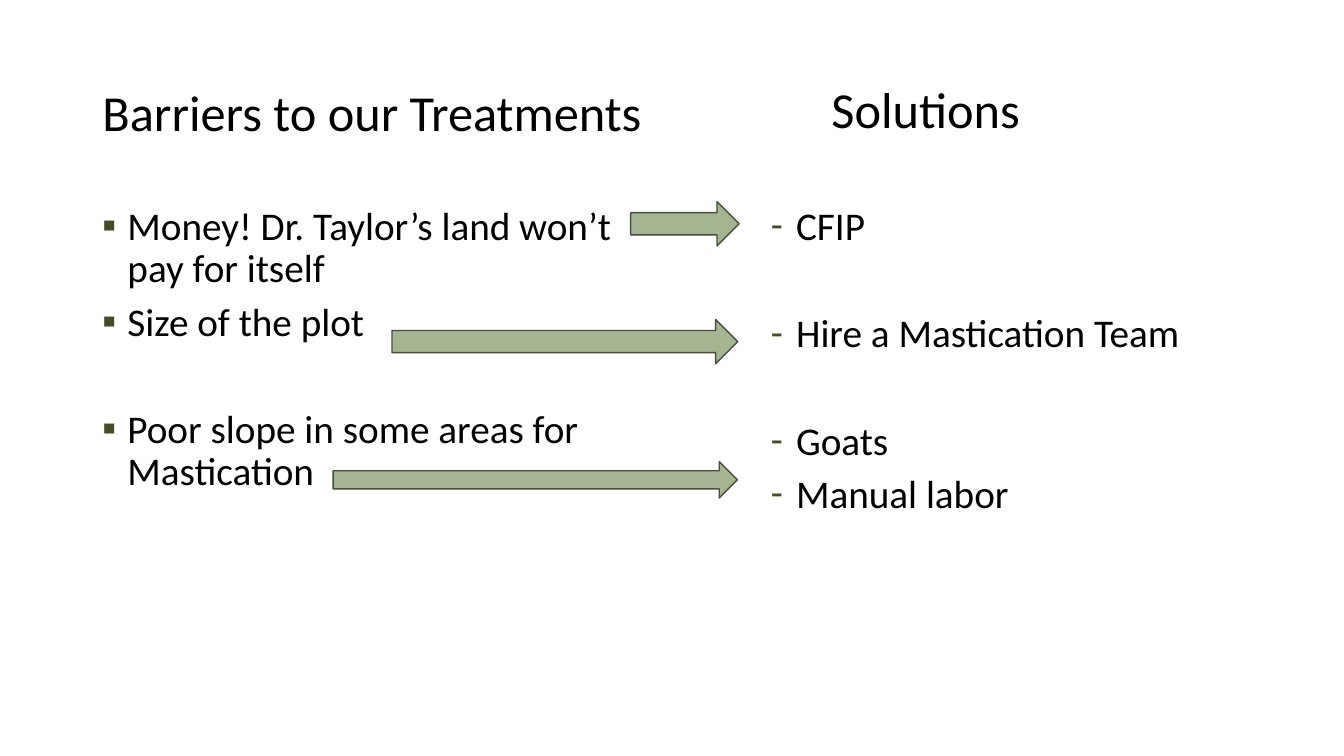
from dataclasses import dataclass

from lxml import etree
from pptx import Presentation
from pptx.dml.color import RGBColor
from pptx.enum.shapes import MSO_SHAPE
from pptx.enum.text import MSO_ANCHOR, MSO_AUTO_SIZE, PP_ALIGN
from pptx.oxml.ns import qn
from pptx.slide import Slide
from pptx.util import Pt

RIGHT_ARROW = MSO_SHAPE.RIGHT_ARROW
MIDDLE, TOP = MSO_ANCHOR.MIDDLE, MSO_ANCHOR.TOP
NO_AUTOFIT = MSO_AUTO_SIZE.NONE
LEFT = PP_ALIGN.LEFT

FONT = "Calibri"
BLACK, OLIVE, SAGE, OUTLINE = "000000", "444D26", "A5B592", "484F40"
HEADING_SIZE, BODY_SIZE = 36, 28
INDENT = 18
NEAR, FAR = 7.8, 46.4


@dataclass(frozen=True)
class Box:
    left: float
    top: float
    width: float
    height: float


@dataclass(frozen=True)
class Item:
    text: str
    before: float = 0


@dataclass(frozen=True)
class BulletList:
    box: Box
    mark: str
    items: tuple[Item, ...]


TITLE_BOX = Box(66, 28.8, 414, 104.4)
SOLUTIONS_BOX = Box(586.8, 52.5, 160.6, 51)
LISTS = (
    BulletList(Box(66, 144, 381.6, 324), "▪", (
        Item("Money! Dr. Taylor’s land won’t pay for itself"),
        Item("Size of the plot", NEAR),
        Item("Poor slope in some areas for Mastication", FAR),
    )),
    BulletList(Box(543.6, 144, 311.8, 324), "-", (
        Item("CFIP"),
        Item("Hire a Mastication Team", FAR),
        Item("Goats", FAR),
        Item("Manual labor", NEAR),
    )),
)
ARROWS = (
    Box(450.5, 144, 77.5, 31.7),
    Box(280, 228.2, 247, 31.7),
    Box(238, 329.8, 288.7, 25.9),
)


def rgb(value: str) -> RGBColor:
    return RGBColor.from_string(value)


def place(sp, box: Box) -> None:
    sp.left, sp.top = Pt(box.left), Pt(box.top)
    sp.width, sp.height = Pt(box.width), Pt(box.height)


def style(p, size: float) -> None:
    p.alignment = LEFT
    for r in p.runs:
        r.font.name = FONT
        r.font.size = Pt(size)
        r.font.color.rgb = rgb(BLACK)


def add_box(s: Slide, box: Box):
    sp = s.shapes.add_textbox(
        Pt(box.left), Pt(box.top), Pt(box.width), Pt(box.height))
    tf = sp.text_frame
    tf.word_wrap = True
    tf.auto_size = NO_AUTOFIT
    tf.vertical_anchor = TOP
    return tf


def add_bullet(p, mark: str) -> None:
    pPr = p._p.get_or_add_pPr()
    pPr.set("marL", str(Pt(INDENT)))
    pPr.set("indent", str(-Pt(INDENT)))
    color = etree.SubElement(pPr, qn("a:buClr"))
    etree.SubElement(color, qn("a:srgbClr"), val=OLIVE)
    etree.SubElement(pPr, qn("a:buFont"), typeface=FONT)
    etree.SubElement(pPr, qn("a:buChar"), char=mark)


def add_list(s: Slide, bullets: BulletList) -> None:
    tf = add_box(s, bullets.box)
    for i, item in enumerate(bullets.items):
        p = tf.add_paragraph() if i else tf.paragraphs[0]
        p.text = item.text
        add_bullet(p, bullets.mark)
        p.line_spacing = 0.9
        p.space_before = Pt(item.before)
        style(p, BODY_SIZE)


def add_arrow(s: Slide, box: Box) -> None:
    sp = s.shapes.add_shape(
        RIGHT_ARROW, Pt(box.left), Pt(box.top), Pt(box.width), Pt(box.height))
    sp.shadow.inherit = False
    sp.fill.solid()
    sp.fill.fore_color.rgb = rgb(SAGE)
    sp.line.color.rgb = rgb(OUTLINE)
    sp.line.width = Pt(1)


def add_headings(s: Slide) -> None:
    title = s.shapes.title
    place(title, TITLE_BOX)
    tf = title.text_frame
    tf.text = "Barriers to our Treatments"
    tf.auto_size = NO_AUTOFIT
    tf.vertical_anchor = MIDDLE
    tf.paragraphs[0].line_spacing = Pt(40)
    style(tf.paragraphs[0], HEADING_SIZE)

    tf = add_box(s, SOLUTIONS_BOX)
    tf.text = "Solutions"
    style(tf.paragraphs[0], HEADING_SIZE)


def main() -> None:
    prs = Presentation()
    prs.slide_width, prs.slide_height = Pt(960), Pt(540)
    s = prs.slides.add_slide(prs.slide_layouts.get_by_name("Title Only"))
    add_headings(s)
    for bullets in LISTS:
        add_list(s, bullets)
    for box in ARROWS:
        add_arrow(s, box)
    prs.save("out.pptx")


if __name__ == "__main__":
    main()
